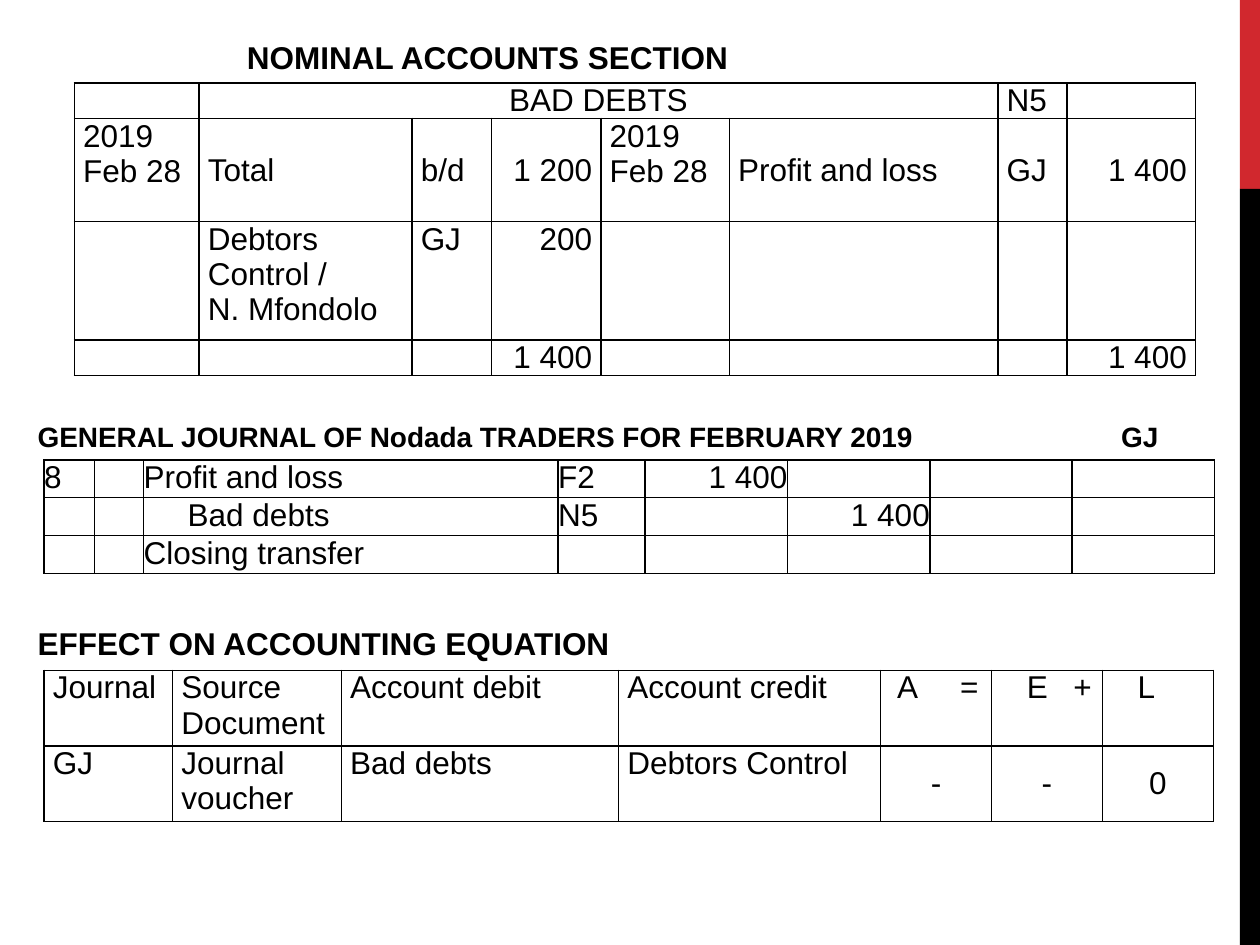
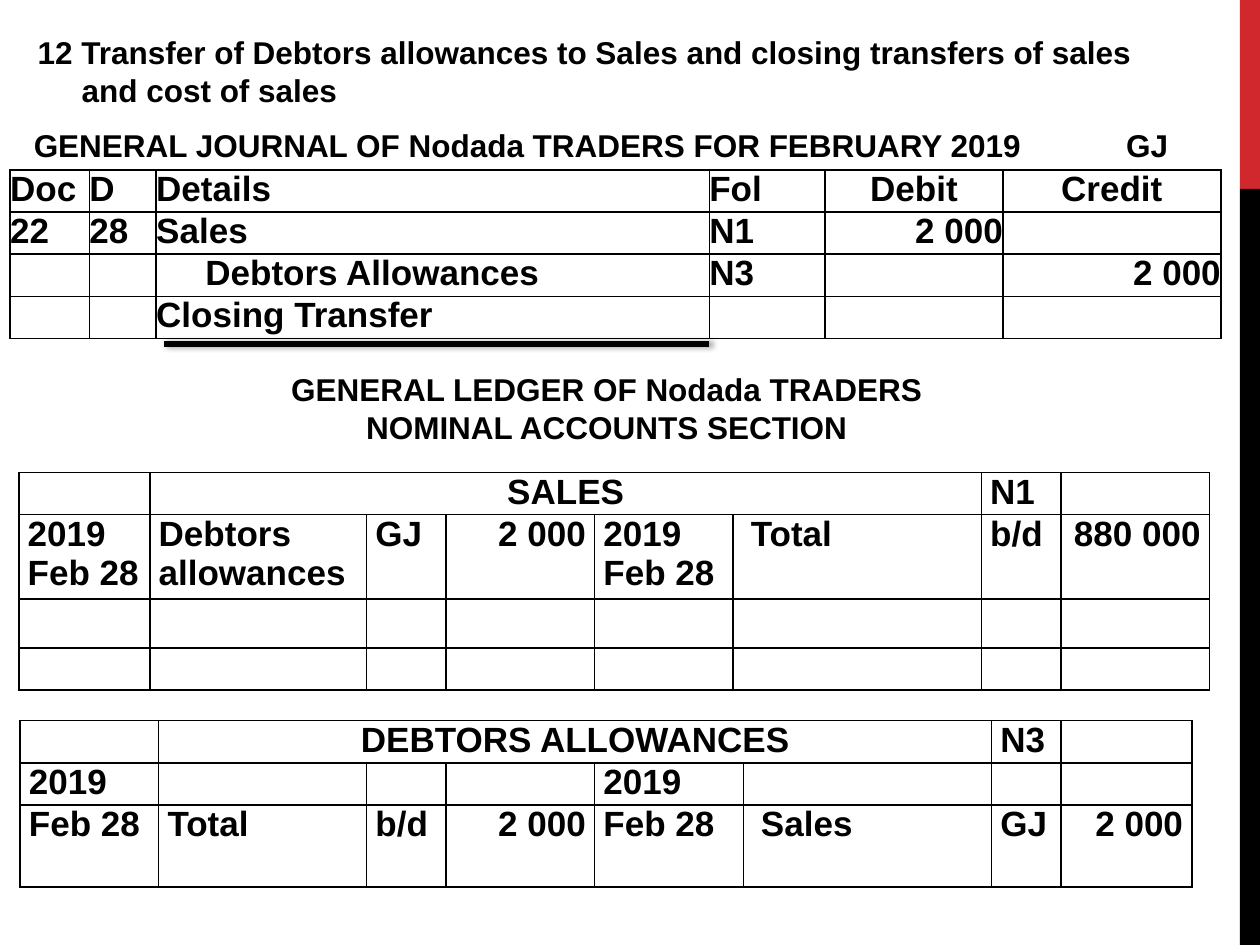
from lxml import etree
from pptx import Presentation
from pptx.dml.color import RGBColor
from pptx.enum.shapes import MSO_CONNECTOR, MSO_SHAPE
from pptx.enum.text import MSO_ANCHOR, PP_ALIGN
from pptx.oxml.ns import qn
from pptx.util import Inches, Pt

BLACK = RGBColor(0x00, 0x00, 0x00)
RED = RGBColor(0xD1, 0x28, 0x2E)
FONT = "Arial"
LEFT, CENTER, RIGHT = PP_ALIGN.LEFT, PP_ALIGN.CENTER, PP_ALIGN.RIGHT
MIDDLE = MSO_ANCHOR.MIDDLE
RECTANGLE = MSO_SHAPE.RECTANGLE
STRAIGHT = MSO_CONNECTOR.STRAIGHT
ALIGNMENTS = {"l": LEFT, "c": CENTER, "r": RIGHT}
ACCOUNT_ALIGNMENTS = "lllrlllr"
CELL_MARGIN = 0.07


def add_solid_fill(parent, color):
    fill = etree.SubElement(parent, qn("a:solidFill"))
    return etree.SubElement(fill, qn("a:srgbClr"), val=str(color))


def set_indent(paragraph, indent):
    paragraph._p.get_or_add_pPr().set("marL", str(Inches(indent)))


def set_tab(paragraph, position):
    tabs = etree.SubElement(paragraph._p.get_or_add_pPr(), qn("a:tabLst"))
    etree.SubElement(tabs, qn("a:tab"), pos=str(Inches(position)), algn="l")


def set_empty_font(paragraph, size):
    properties = etree.SubElement(paragraph._p, qn("a:endParaRPr"), sz=str(size * 100))
    etree.SubElement(properties, qn("a:latin"), typeface=FONT)


def set_borders(cell):
    properties = cell._tc.get_or_add_tcPr()
    for index, side in enumerate(("lnL", "lnR", "lnT", "lnB")):
        border = etree.Element(qn(f"a:{side}"), w=str(Pt(1)))
        add_solid_fill(border, BLACK)
        properties.insert(index, border)


class LedgerDeck:
    def __init__(self):
        self.presentation = Presentation()
        self.presentation.slide_width = Inches(10)
        self.presentation.slide_height = Inches(7.5)
        self.slide = None

    def new_slide(self):
        self.slide = self.presentation.slides.add_slide(self.presentation.slide_layouts[6])
        self.band(0, 1.5, RED)
        self.band(1.5, 6, BLACK)

    def band(self, top, height, color):
        shape = self.slide.shapes.add_shape(
            RECTANGLE, Inches(9.84), Inches(top), Inches(0.16), Inches(height))
        shape.shadow.inherit = False
        shape.fill.solid()
        shape.fill.fore_color.rgb = color
        shape.line.fill.background()

    def style(self, paragraph, size, bold, alignment):
        paragraph.alignment = alignment
        for run in paragraph.runs:
            run.font.name = FONT
            run.font.size = Pt(size)
            run.font.bold = bold
            run.font.color.rgb = BLACK

    def heading(self, left, top, width, height, text, size=18, alignment=LEFT, tab=None):
        box = self.slide.shapes.add_textbox(
            Inches(left), Inches(top), Inches(width), Inches(height))
        frame = box.text_frame
        frame.word_wrap = True
        frame.vertical_anchor = MIDDLE
        frame.text = text
        for paragraph in frame.paragraphs:
            self.style(paragraph, size, True, alignment)
        if tab:
            set_tab(frame.paragraphs[0], tab)
        return frame

    def table(self, left, top, widths, heights, rows, alignments,
              size=18, bold=False, margin=CELL_MARGIN):
        table = self.slide.shapes.add_table(
            len(rows), len(widths), Inches(left), Inches(top),
            Inches(sum(widths)), Inches(sum(heights))).table
        table.first_row = False
        table.horz_banding = False
        for column, width in zip(table.columns, widths):
            column.width = Inches(width)
        for row, height, texts in zip(table.rows, heights, rows):
            row.height = Inches(height)
            for cell, text, alignment in zip(row.cells, texts, alignments):
                cell.margin_left = cell.margin_right = Inches(margin)
                cell.margin_top = cell.margin_bottom = 0
                cell.fill.background()
                set_borders(cell)
                if text:
                    cell.text_frame.text = text
                    for paragraph in cell.text_frame.paragraphs:
                        self.style(paragraph, size, bold, ALIGNMENTS[alignment])
                else:
                    set_empty_font(cell.text_frame.paragraphs[0], size)
        return table

    def account(self, left, top, widths, heights, name, folio, entries, **style):
        title_row = ["", name, "", "", "", "", folio, ""]
        table = self.table(left, top, widths, heights, [title_row] + entries,
                           ACCOUNT_ALIGNMENTS, **style)
        table.cell(0, 1).merge(table.cell(0, 5))
        table.cell(0, 1).text_frame.paragraphs[0].alignment = CENTER
        return table

    def rule(self, left, right, top):
        line = self.slide.shapes.add_connector(
            STRAIGHT, Inches(left), Inches(top), Inches(right), Inches(top))
        line.line.color.rgb = BLACK
        line.line.width = Pt(3.25)
        effects = etree.SubElement(line._element.spPr, qn("a:effectLst"))
        shadow = etree.SubElement(effects, qn("a:outerShdw"), blurRad=str(Pt(3.1)),
                                  dist=str(Pt(1.8)), dir="0")
        color = etree.SubElement(shadow, qn("a:srgbClr"), val=str(BLACK))
        etree.SubElement(color, qn("a:alpha"), val="40000")


def first_paragraph(table, row, column):
    return table.cell(row, column).text_frame.paragraphs[0]


def build_bad_debts(deck):
    deck.new_slide()
    blank = [""] * 8
    account = deck.account(
        0.59, 0.66, [0.99, 1.69, 0.63, 0.87, 1.02, 2.13, 0.55, 1.02],
        [0.28, 0.82, 0.94, 0.28], "BAD DEBTS", "N5",
        [["2019 Feb 28", "Total", "b/d", "1 200",
          "2019 Feb 28", "Profit and loss", "GJ", "1 400"],
         ["", "Debtors Control /\nN. Mfondolo", "GJ", "200"] + blank[4:],
         ["", "", "", "1 400", "", "", "", "1 400"]])
    for column in (1, 2, 3, 5, 6, 7):
        account.cell(1, column).vertical_anchor = MIDDLE
    deck.heading(0.12, 0.25, 7.5, 0.4, "NOMINAL ACCOUNTS SECTION", alignment=CENTER)

    deck.heading(0.2, 3.28, 9.45, 0.37,
                 "GENERAL JOURNAL OF Nodada TRADERS FOR FEBRUARY 2019\tGJ", size=16, tab=8.6)
    journal = deck.table(
        0.35, 3.65, [0.4, 0.39, 3.29, 0.69] + [1.13] * 4, [0.3] * 3,
        [["8", "", "Profit and loss", "F2", "1 400", "", "", ""],
         ["", "", "Bad debts", "N5", "", "1 400", "", ""],
         ["", "", "Closing transfer"] + blank[3:]],
        "llllrrrr", margin=0)
    set_indent(first_paragraph(journal, 1, 2), 0.35)

    equation = deck.table(
        0.35, 5.32, [1.02, 1.34, 2.2, 2.08] + [0.88] * 3, [0.6] * 2,
        [["Journal", "Source Document", "Account debit", "Account credit",
          "A\t=", "E\t+", "L"],
         ["GJ", "Journal voucher", "Bad debts", "Debtors Control", "-", "-", "0"]],
        "lllllll")
    for column, indent, tab in ((4, 0.06, 0.5), (5, 0.21, 0.37), (6, 0.21, None)):
        header = equation.cell(0, column)
        header.margin_left = Inches(CELL_MARGIN + indent)
        if tab:
            header.margin_right = 0
            set_tab(first_paragraph(equation, 0, column), tab)
        first_paragraph(equation, 1, column).alignment = CENTER
        equation.cell(1, column).vertical_anchor = MIDDLE
    deck.heading(0.2, 4.9, 9.45, 0.4, "EFFECT ON ACCOUNTING EQUATION")


def build_debtors_allowances(deck):
    deck.new_slide()
    ledger_style = {"size": 20, "bold": True}
    blank = [""] * 8
    title = deck.heading(
        0.2, 0.21, 9.37, 0.71,
        "12 Transfer of Debtors allowances to Sales and closing transfers of sales\n"
        "and cost of sales")
    set_indent(title.paragraphs[1], 0.35)

    deck.heading(0.17, 0.95, 9.34, 0.4,
                 "GENERAL JOURNAL OF Nodada TRADERS FOR FEBRUARY 2019\tGJ", tab=8.67)
    journal = deck.table(
        0.08, 1.35, [0.63, 0.53, 4.39, 0.92, 1.41, 1.73], [0.33] * 4,
        [["Doc", "D", "Details", "Fol", "Debit", "Credit"],
         ["22", "28", "Sales", "N1", "2 000", ""],
         ["", "", "Debtors Allowances", "N3", "", "2 000"],
         ["", "", "Closing Transfer", "", "", ""]],
        "llllrr", margin=0, **ledger_style)
    for column in (4, 5):
        first_paragraph(journal, 0, column).alignment = CENTER
    set_indent(first_paragraph(journal, 2, 2), 0.39)
    deck.rule(1.3, 5.63, 2.73)

    deck.heading(0.17, 2.88, 9.29, 0.71,
                 "GENERAL LEDGER OF Nodada TRADERS\nNOMINAL ACCOUNTS SECTION", alignment=CENTER)
    sales = deck.account(
        0.15, 3.75, [1.04, 1.72, 0.63, 1.18, 1.1, 1.97, 0.63, 1.18],
        [0.33, 0.67, 0.39, 0.33], "SALES", "N1",
        [["2019\nFeb 28", "Debtors allowances", "GJ", "2 000",
          "2019\nFeb 28", "Total", "b/d", "880 000"], blank, blank],
        **ledger_style)
    set_indent(first_paragraph(sales, 1, 5), 0.07)
    allowances = deck.account(
        0.16, 5.72, [1.1, 1.65, 0.63, 1.18, 1.18, 1.97, 0.55, 1.04],
        [0.33, 0.33, 0.65], "DEBTORS ALLOWANCES", "N3",
        [["2019", "", "", "", "2019", "", "", ""],
         ["Feb 28", "Total", "b/d", "2 000", "Feb 28", "Sales", "GJ", "2 000"]],
        **ledger_style)
    set_indent(first_paragraph(allowances, 2, 5), 0.07)


def main():
    deck = LedgerDeck()
    build_bad_debts(deck)
    build_debtors_allowances(deck)
    deck.presentation.save("out.pptx")


if __name__ == "__main__":
    main()
